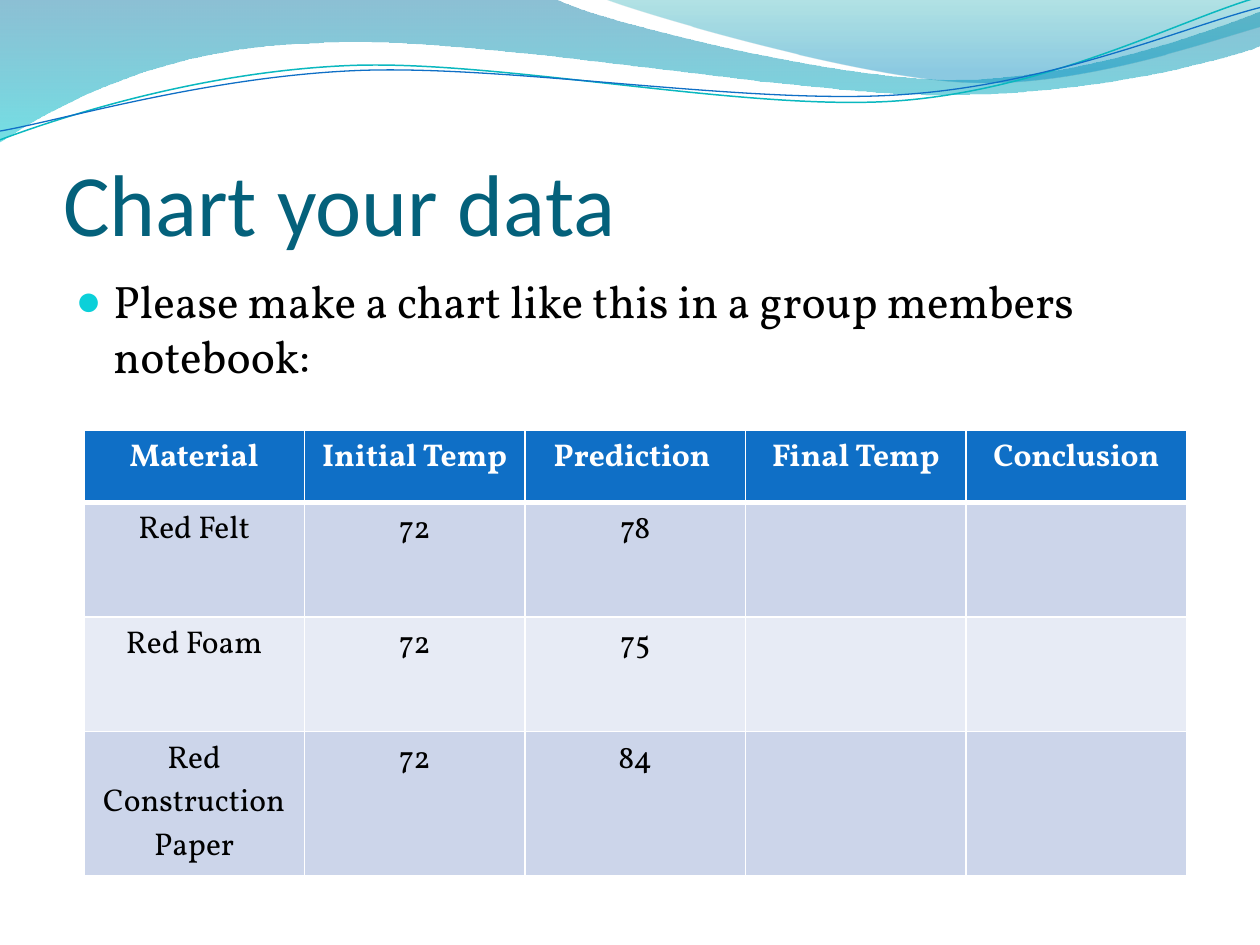
import math

from lxml import etree
from pptx import Presentation
from pptx import util as u
from pptx.dml.color import RGBColor
from pptx.enum import text
from pptx.oxml import ns

INCH = u.Cm(2.54)
TITLE_FONT, BODY_FONT = "Calibri", "Vollkorn"
WHITE, BLACK, BLUE = "FFFFFF", "000000", "0F6FC6"
BAND_COLORS = ("CCD5EA", "E7EBF5")
LINE_TILT = -2.7
LINE_CENTER = (4.99, 0.58)

# Wave outlines in inches: a pair is a corner, six numbers are a Bézier curve.
LEFT_WAVE = [
    (0, 0), (4.4, -0.01),
    (4.76, 0.17, 6.64, 0.63, 7.58, 0.63),
    (8.53, 0.63, 9.58, 0.26, 10, 0.09),
    (10.01, 0.36),
    (9.83, 0.44, 8.7, 0.76, 7.46, 0.75),
    (6.22, 0.75, 3.82, 0.28, 2.57, 0.34),
    (1.29, 0.36, 0.46, 0.83, -0.01, 1.13),
    (0, 0),
]
RIGHT_WAVE = [
    (4.79, -0.01),
    (5.09, 0.11, 6.82, 0.62, 7.69, 0.65),
    (8.56, 0.69, 9.61, 0.32, 10, 0.21),
    (10, 0), (4.79, -0.01),
]
TEAL_LINE = [
    (0, 1.11),
    (0.48, 0.93, 1.58, 0.57, 2.77, 0.52),
    (3.95, 0.47, 5.93, 0.89, 7.13, 0.8),
    (8.33, 0.71, 9.38, 0.15, 9.98, -0.02),
]
BLUE_LINE = [
    (0, 1.04),
    (0.47, 0.96, 1.64, 0.61, 2.83, 0.56),
    (4.03, 0.51, 5.97, 0.84, 7.17, 0.75),
    (8.36, 0.67, 9.41, 0.21, 10, 0.06),
]

TABLE_ROWS = [
    ("Material", "Initial Temp", "Prediction ", "Final Temp", "Conclusion"),
    ("Red Felt", "72", "78", "", ""),
    ("Red Foam", "72", "75", "", ""),
    ("Red Construction Paper", "72", "84", "", ""),
]


def color(value):
    return RGBColor.from_string(value)


def add_xml(parent, tag, **attributes):
    return etree.SubElement(parent, ns.qn(tag), attributes)


def add_xml_color(parent, value):
    return add_xml(parent, "a:srgbClr", val=value)


def pairs(step):
    return list(zip(step[::2], step[1::2]))


def turn(point, degrees):
    """Turn a point clockwise about the centre of the wave lines."""
    angle = math.radians(degrees)
    x, y = point[0] - LINE_CENTER[0], point[1] - LINE_CENTER[1]
    return (LINE_CENTER[0] + x * math.cos(angle) - y * math.sin(angle),
            LINE_CENTER[1] + x * math.sin(angle) + y * math.cos(angle))


def add_outline(slide, outline, close, tilt=0):
    """Draw through all points, then join each curve's three points as one Bézier."""
    points = [turn(point, -tilt) for step in outline for point in pairs(step)]
    points = [(x * INCH, y * INCH) for x, y in points]
    builder = slide.shapes.build_freeform(*points[0])
    builder.add_line_segments(points[1:], close=close)
    shape = builder.convert_to_shape()
    segments = iter(shape._element.findall(".//" + ns.qn("a:lnTo")))
    for step in outline[1:]:
        segment = next(segments)
        if len(step) == 6:
            segment.addprevious(curve := etree.Element(ns.qn("a:cubicBezTo")))
            for part in (segment, next(segments), next(segments)):
                curve.append(part[0])
                part.getparent().remove(part)
    shape.rotation = tilt
    shape.shadow.inherit = False
    return shape


def add_wave(slide, outline, stops):
    """Add a filled wave; stops are (position %, colour, opacity %) from top down."""
    shape = add_outline(slide, outline, close=True)
    shape.line.fill.background()
    shape.fill.gradient()
    shape.fill.gradient_angle = 270
    stop_list = shape._element.spPr.find(".//" + ns.qn("a:gsLst"))
    for old_stop in list(stop_list):
        stop_list.remove(old_stop)
    for position, value, opacity in stops:
        stop = add_xml(stop_list, "a:gs", pos=str(position * 1000))
        add_xml(add_xml_color(stop, value), "a:alpha", val=str(opacity * 1000))


def add_wave_line(slide, outline, value, width):
    shape = add_outline(slide, outline, close=False, tilt=LINE_TILT)
    shape.fill.background()
    shape.line.color.rgb = color(value)
    shape.line.width = u.Pt(width)


def add_run(paragraph, words, font, size, value, bold=False):
    run = paragraph.add_run()
    run.text = words
    run.font.name = font
    run.font.size = u.Pt(size)
    run.font.color.rgb = color(value)
    run.font.bold = bold


def place(shape, left, top, width, height):
    shape.left, shape.top = u.Cm(left), u.Cm(top)
    shape.width, shape.height = u.Cm(width), u.Cm(height)


def bring_to_front(slide, shape):
    slide.shapes._spTree.append(shape._element)


def fill_title(slide, words):
    title = slide.shapes.title
    bring_to_front(slide, title)
    place(title, 1.27, 1.96, 22.86, 3.17)
    frame = title.text_frame
    frame.auto_size = text.MSO_AUTO_SIZE.NONE
    frame.vertical_anchor = text.MSO_ANCHOR.BOTTOM
    frame.margin_left = frame.margin_right = frame.margin_bottom = 0
    paragraph = frame.paragraphs[0]
    paragraph.alignment = text.PP_ALIGN.LEFT
    add_run(paragraph, words, TITLE_FONT, 50, "04617B")


def fill_body(slide, words):
    body = slide.placeholders[1]
    bring_to_front(slide, body)
    place(body, 1.27, 5.38, 22.86, 3.3)
    body.text_frame.auto_size = text.MSO_AUTO_SIZE.NONE
    paragraph = body.text_frame.paragraphs[0]
    add_run(paragraph, words, BODY_FONT, 26, BLACK)
    properties = paragraph._p.get_or_add_pPr()
    indent = u.Cm(0.76)
    properties.set("marL", str(indent))
    properties.set("indent", str(-indent))
    add_xml_color(add_xml(properties, "a:buClr"), "0BD0D9")
    add_xml(properties, "a:buSzPct", val="95000")
    add_xml(properties, "a:buChar", char="●")


def set_borders(cell, bottom_width):
    properties = cell._tc.get_or_add_tcPr()
    for side, width in (("L", 1), ("R", 1), ("T", 1), ("B", bottom_width)):
        line = add_xml(properties, "a:ln" + side, w=str(u.Pt(width)))
        add_xml_color(add_xml(line, "a:solidFill"), WHITE)


def add_data_table(slide, rows):
    frame = slide.shapes.add_table(
        len(rows), len(rows[0]), u.Cm(1.69), u.Cm(8.68), u.Cm(22.23), u.Cm(8.38))
    table = frame.table
    for row_index, row in enumerate(rows):
        header = row_index == 0
        table.rows[row_index].height = u.Cm(1.45 if header else 2.31)
        fill = BLUE if header else BAND_COLORS[(row_index - 1) % 2]
        for column_index, words in enumerate(row):
            cell = table.cell(row_index, column_index)
            set_borders(cell, 3 if header else 1)
            cell.fill.solid()
            cell.fill.fore_color.rgb = color(fill)
            if words:
                paragraph = cell.text_frame.paragraphs[0]
                paragraph.alignment = text.PP_ALIGN.CENTER
                add_run(paragraph, words, BODY_FONT, 18, WHITE if header else BLACK, header)


def main():
    presentation = Presentation()
    presentation.slide_width, presentation.slide_height = u.Cm(25.4), u.Cm(19.05)
    slide = presentation.slides.add_slide(presentation.slide_layouts[1])
    add_wave(slide, LEFT_WAVE, [(0, "0074A1", 45), (100, "00C6CF", 55)])
    add_wave(slide, RIGHT_WAVE, [(0, "00A1A9", 30), (80, "008BBF", 45)])
    add_wave_line(slide, TEAL_LINE, "0AB8BF", 0.85)
    add_wave_line(slide, BLUE_LINE, BLUE, 0.75)
    fill_title(slide, "Chart your data")
    fill_body(slide, "Please make a chart like this in a group members notebook:")
    add_data_table(slide, TABLE_ROWS)
    presentation.save("out.pptx")


if __name__ == "__main__":
    main()
